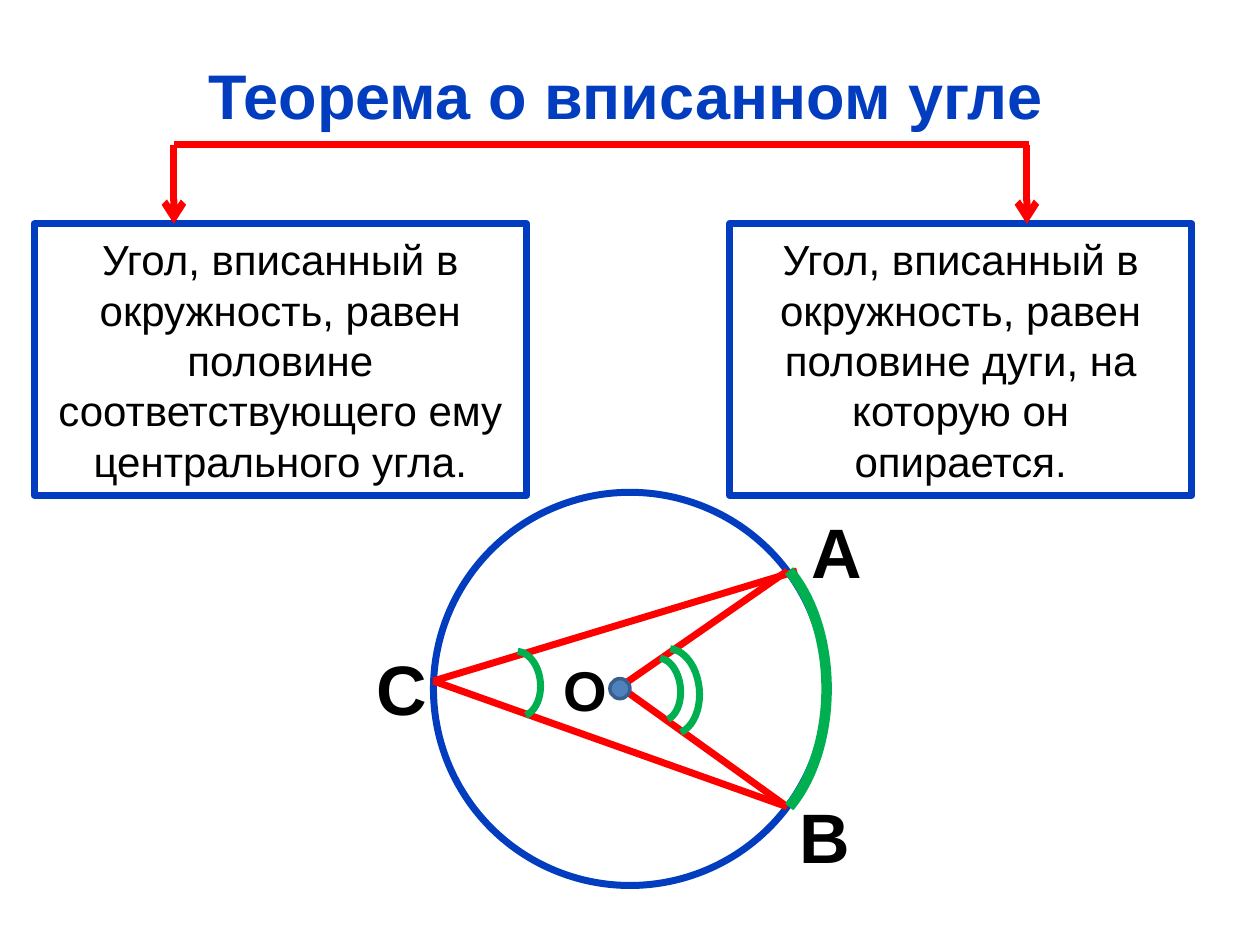
from dataclasses import dataclass

from lxml.etree import SubElement
from pptx import Presentation
from pptx.dml.color import RGBColor
from pptx.enum.shapes import MSO_CONNECTOR as Line, MSO_SHAPE as Shape
from pptx.enum.text import MSO_ANCHOR as Anchor, PP_ALIGN as Align
from pptx.oxml.ns import qn
from pptx.util import Inches, Pt

COLORS = {
    "blue": "033DBF", "red": "FF0000", "green": "00B050", "black": "000000",
    "white": "FFFFFF", "dot": "4F81BD", "dot_edge": "3A5F8C",
}
STROKE = 4


@dataclass
class Box:
    """A rectangle whose inside is measured in percent of its sides."""
    left: float
    top: float
    width: float
    height: float

    def point(self, x, y):
        return (int(self.left + self.width * x / 100),
                int(self.top + self.height * y / 100))

    def inner(self, x, y, width, height):
        return Box(*self.point(x, y), int(self.width * width / 100),
                   int(self.height * height / 100))

    def bounds(self):
        return self.left, self.top, self.width, self.height


def color(name):
    return RGBColor.from_string(COLORS[name])


def write(frame, text, size, name="black", bold=False, align=Align.LEFT,
          anchor=Anchor.TOP):
    frame.word_wrap = True
    frame.vertical_anchor = anchor
    para = frame.paragraphs[0]
    para.alignment = align
    span = para.add_run()
    span.text = text
    span.font.name = "Arial"
    span.font.size = Pt(size)
    span.font.bold = bold
    span.font.color.rgb = color(name)


def add_outline(page, kind, box, line, width=STROKE, fill=None):
    shape = page.shapes.add_shape(kind, *box.bounds())
    shape.shadow.inherit = False
    if fill:
        shape.fill.solid()
        shape.fill.fore_color.rgb = color(fill)
    else:
        shape.fill.background()
    shape.line.color.rgb = color(line)
    shape.line.width = Pt(width)
    return shape


def add_arc(page, box, rotation, start, end, width=STROKE):
    arc = add_outline(page, Shape.ARC, box, "green", width)
    arc.rotation = rotation
    arc.adjustments[0], arc.adjustments[1] = start, end


def add_line(page, start, end, arrow=False):
    line = page.shapes.add_connector(Line.STRAIGHT, *start, *end)
    line.line.color.rgb = color("red")
    line.line.width = Pt(STROKE)
    properties = line.element.spPr
    if arrow:
        SubElement(properties.find(qn("a:ln")), qn("a:tailEnd"), type="arrow")
    SubElement(properties, qn("a:effectLst"))


def add_title(page, box, text):
    title = page.shapes.title
    title.left, title.top, title.width, title.height = box.bounds()
    write(title.text_frame, text, 36, "blue", True, Align.CENTER, Anchor.MIDDLE)


def add_statement(page, box, text):
    shape = add_outline(page, Shape.RECTANGLE, box, "blue", fill="white")
    write(shape.text_frame, text, 24, align=Align.CENTER, anchor=Anchor.MIDDLE)


def add_bracket(page, box):
    """Bar under the title with an arrow down to each statement."""
    add_line(page, box.point(0, 0), box.point(100.3, 0))
    for x in (0, 100):
        add_line(page, box.point(x, 0), box.point(x, 100), arrow=True)


def add_circle_diagram(page, box):
    """Circle with inscribed angle ACB, central angle AOB and arc AB."""
    add_outline(page, Shape.OVAL, box, "blue")
    a, b = box.point(90, 20), box.point(90, 80)
    c, o = box.point(0, 48), box.point(47.5, 49.5)

    for start, end in ((box.point(92.5, 20), c), (c, b), (a, o), (o, b)):
        add_line(page, start, end)

    add_arc(page, box.inner(38.8, 26.3, 75, 47.4), 90, 123.11, 200.83, 6)
    angle_marks = ((13.1, 43, 16.7, 11.5), (49.7, 45, 16, 10.3),
                   (49.4, 43.3, 21.8, 14.7))
    for mark in angle_marks:
        add_arc(page, box.inner(*mark), 84.9, 110.85, 210.53)

    labels = (("С", 40, (-17.6, 37.5, 12.5, 24.7)),
              ("А", 40, (93, 2.6, 20, 24.7)),
              ("В", 40, (90, 75, 30, 24.7)),
              ("О", 32, (30, 40, 12.5, 20.5)))
    for text, size, place in labels:
        label = page.shapes.add_textbox(*box.inner(*place).bounds())
        write(label.text_frame, text, size, bold=True)

    add_outline(page, Shape.OVAL, box.inner(44.9, 47.4, 5.1, 5.1),
                "dot_edge", 2, fill="dot")


def main():
    deck = Presentation()
    deck.slide_width, deck.slide_height = Inches(10), Inches(7.5)
    page = deck.slides.add_slide(deck.slide_layouts[5])
    area = Box(0, 0, deck.slide_width, deck.slide_height)

    add_title(page, area.inner(9.8, 5.9, 79.7, 8.1), "Теорема о вписанном угле")
    add_statement(page, area.inner(2.7, 23.7, 39.1, 28.7),
                  "Угол, вписанный в окружность, равен половине "
                  "соответствующего ему центрального угла.")
    add_statement(page, area.inner(57.9, 23.7, 36.7, 28.7),
                  "Угол, вписанный в окружность, равен половине дуги, "
                  "на которую он опирается.")
    add_circle_diagram(page, area.inner(34.4, 52.1, 31.2, 41.6))
    add_bracket(page, area.inner(13.8, 15.3, 67.7, 8.4))
    deck.save("out.pptx")


if __name__ == "__main__":
    main()
